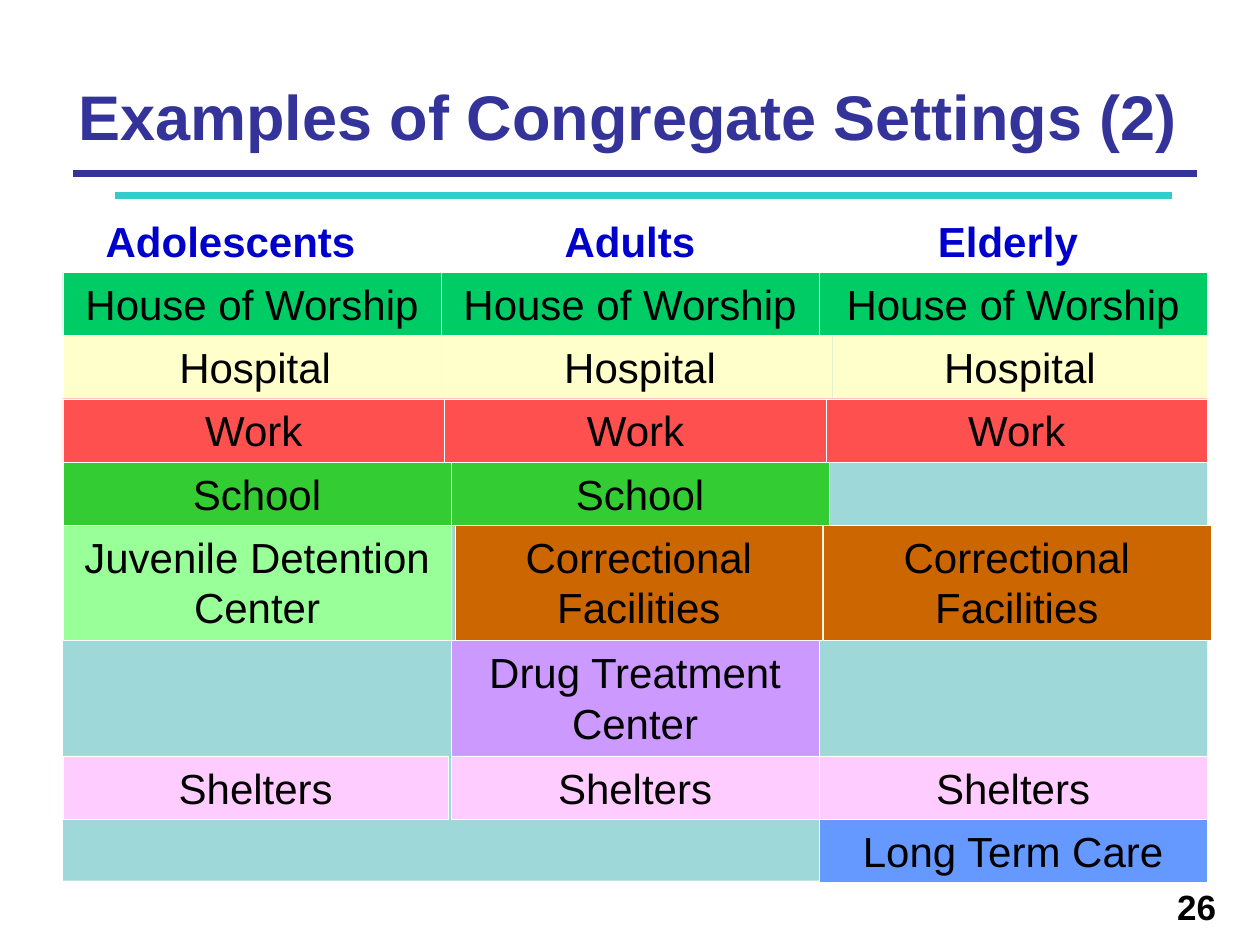
from dataclasses import dataclass
from itertools import accumulate

from lxml.etree import SubElement
from pptx import Presentation
from pptx.dml.color import RGBColor as RGB
from pptx.enum.shapes import MSO_CONNECTOR as CONN, MSO_SHAPE as SHAPE
from pptx.enum.text import MSO_ANCHOR as ANCHOR, PP_ALIGN as ALIGN
from pptx.oxml.ns import qn
from pptx.util import Inches, Pt


@dataclass(frozen=True)
class Theme:
    font: str = "Arial"
    title: str = "333399"
    accent: str = "33CCCC"
    header: str = "0000CC"
    ink: str = "000000"
    border: str = "FFFFFF"
    panel: str = "009999"
    panel_alpha: int = 38000
    worship: str = "00CC66"
    hospital: str = "FFFFCC"
    work: str = "FF5050"
    school: str = "33CC33"
    juvenile: str = "99FF99"
    correctional: str = "CC6600"
    drug: str = "CC99FF"
    shelter: str = "FFCCFF"
    care: str = "6699FF"
    title_size: int = 36
    body_size: int = 24
    number_size: int = 20


T = Theme()
WIDTH, HEIGHT = Inches(10), Inches(7.5)
LEFT, RIGHT, TOP = 5, 95.8, 28.8
SINGLE, DOUBLE = 6.7, 12.2
ROW_HEIGHTS = [SINGLE] * 4 + [DOUBLE] * 2 + [SINGLE] * 2
ROW_TOPS = list(accumulate(ROW_HEIGHTS, initial=TOP))

HEADERS = [("Adolescents", 5.8, 30.8), ("Adults", 40, 60), ("Elderly", 70, 90)]

CELLS = [
    (0, "House of Worship", T.worship, [(LEFT, 35), (35, 65), (65, RIGHT)]),
    (1, "Hospital", T.hospital, [(LEFT, 35.5), (35.5, 66.1), (66.1, RIGHT)]),
    (2, "Work", T.work, [(LEFT, 35.3), (35.3, 65.6), (65.6, RIGHT)]),
    (3, "School", T.school, [(LEFT, 35.8), (35.8, 65.8)]),
    (4, "Juvenile Detention Center", T.juvenile, [(LEFT, 35.8)]),
    (4, "Correctional Facilities", T.correctional, [(36.1, 65.3), (65.3, 96.1)]),
    (5, "Drug Treatment Center", T.drug, [(35.8, 65)]),
    (6, "Shelters", T.shelter, [(LEFT, 35.6), (35.8, 65), (65, RIGHT)]),
    (7, "Long Term Care", T.care, [(65, RIGHT)]),
]


def x(pct):
    return int(WIDTH * pct / 100)


def y(pct):
    return int(HEIGHT * pct / 100)


def frame(left, top, right, bottom):
    return x(left), y(top), x(right) - x(left), y(bottom) - y(top)


def write(sp, text, size, color, bold=False, align=ALIGN.CENTER, anchor=ANCHOR.TOP):
    tf = sp.text_frame
    tf.word_wrap = True
    tf.vertical_anchor = anchor
    p = tf.paragraphs[0]
    p.alignment = align
    r = p.add_run()
    r.text = text
    for name, value in {"name": T.font, "size": Pt(size), "bold": bold}.items():
        setattr(r.font, name, value)
    r.font.color.rgb = RGB.from_string(color)


def add_text(s, box, *args, **fmt):
    write(s.shapes.add_textbox(*frame(*box)), *args, **fmt)


def add_rect(s, box, fill):
    sp = s.shapes.add_shape(SHAPE.RECTANGLE, *frame(*box))
    sp.shadow.inherit = False
    sp.fill.solid()
    sp.fill.fore_color.rgb = RGB.from_string(fill)
    sp.line.fill.background()
    return sp


def add_panel(s):
    sp = add_rect(s, (LEFT, TOP, RIGHT, 93.2), T.panel)
    color = sp.fill._xPr.find(qn("a:solidFill"))[0]
    SubElement(color, qn("a:alpha"), val=str(T.panel_alpha))


def add_cell(s, row, text, fill, left, right):
    sp = add_rect(s, (left, ROW_TOPS[row], right, ROW_TOPS[row + 1]), fill)
    sp.line.color.rgb = RGB.from_string(T.border)
    sp.line.width = Pt(0.25)
    write(sp, text, T.body_size, T.ink)


def add_rule(s, left, right, top, color):
    ln = s.shapes.add_connector(CONN.STRAIGHT, x(left), y(top), x(right), y(top))
    ln.line.color.rgb = RGB.from_string(color)
    ln.line.width = Pt(4)
    SubElement(ln._element.spPr, qn("a:effectLst"))


def main():
    prs = Presentation()
    prs.slide_width, prs.slide_height = WIDTH, HEIGHT
    s = prs.slides.add_slide(prs.slide_layouts[6])

    add_rule(s, 5.8, 95, 18.4, T.title)
    add_rule(s, 9.1, 93, 20.7, T.accent)
    add_panel(s)
    for text, left, right in HEADERS:
        add_text(s, (left, 22.1, right, TOP), text, T.body_size, T.header, bold=True)
    for row, text, fill, spans in CELLS:
        for left, right in spans:
            add_cell(s, row, text, fill, left, right)
    add_text(s, (3.3, 6.7, 96.4, 17.7), "Examples of Congregate Settings (2)",
             T.title_size, T.title, bold=True, anchor=ANCHOR.MIDDLE)
    add_text(s, (40.8, 93.1, 97.5, 100), "26", T.number_size, T.ink,
             bold=True, align=ALIGN.RIGHT)

    prs.save("out.pptx")


if __name__ == "__main__":
    main()
